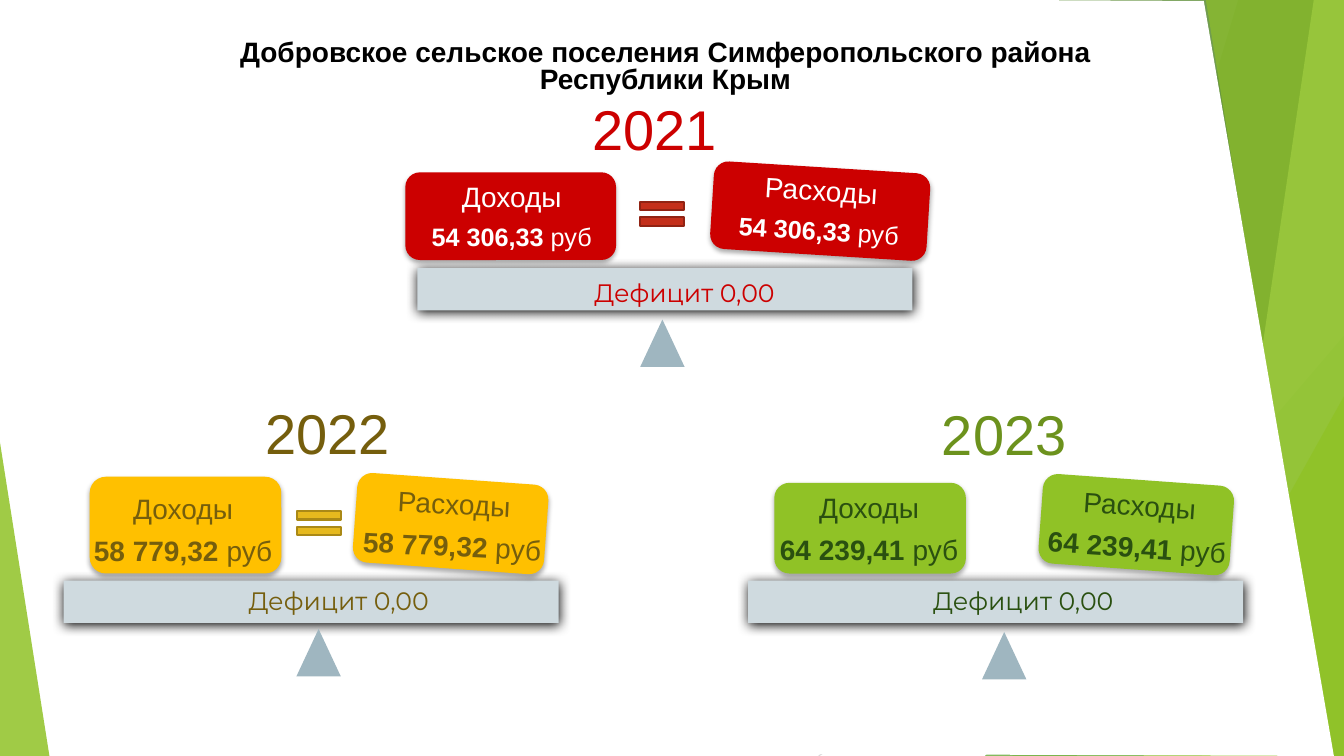
from lxml.etree import SubElement
from pptx import Presentation
from pptx.dml.color import RGBColor
from pptx.enum.shapes import MSO_CONNECTOR, MSO_SHAPE
from pptx.enum.text import MSO_AUTO_SIZE, PP_ALIGN
from pptx.oxml.ns import qn
from pptx.util import Pt

UNIT = 9144  # one px is 1/100 inch
WIDE, HIGH = 1333, 750


def px(n):
    return round(n * UNIT)


def rgb(code):
    return RGBColor.from_string(code)


def paint(shape, color, alpha=100, edge=None):
    shape.shadow.inherit = False
    shape.fill.solid()
    shape.fill.fore_color.rgb = rgb(color)
    if alpha < 100:
        tone = shape.fill._xPr.find(".//" + qn("a:srgbClr"))
        SubElement(tone, qn("a:alpha"), val=str(alpha * 1000))
    if edge:
        shape.line.color.rgb = rgb(edge)
        shape.line.width = Pt(1.5)
    else:
        shape.line.fill.background()


def shade(shape, alpha, blur, dist):
    glow = shape._element.spPr.find(qn("a:effectLst"))
    cast = SubElement(glow, qn("a:outerShdw"), blurRad=str(Pt(blur)),
                      dist=str(Pt(dist)), dir="5400000", rotWithShape="0")
    tone = SubElement(cast, qn("a:srgbClr"), val="000000")
    SubElement(tone, qn("a:alpha"), val=str(alpha * 1000))


def form(slide, kind, box, color, alpha=100, edge=None, adj=(), turn=0):
    shape = slide.shapes.add_shape(kind, *map(px, box))
    for i, part in enumerate(adj):
        shape.adjustments[i] = part
    shape.rotation = turn
    paint(shape, color, alpha, edge)
    return shape


def shard(slide, points, color, alpha=100):
    pen = slide.shapes.build_freeform(*points[0], scale=UNIT)
    pen.add_line_segments(points[1:], close=True)
    paint(pen.convert_to_shape(), color, alpha)


def write(slide, box, lines, color, font="Arial", after=None, turn=0):
    """Each line is a size and its (text, bold) runs."""
    label = slide.shapes.add_textbox(*map(px, box))
    label.rotation = turn
    frame = label.text_frame
    frame.word_wrap = True
    frame.auto_size = MSO_AUTO_SIZE.SHAPE_TO_FIT_TEXT
    for i, (size, runs) in enumerate(lines):
        para = frame.add_paragraph() if i else frame.paragraphs[0]
        para.alignment = PP_ALIGN.CENTER
        if after is not None:
            para.space_after = Pt(after)
        para.font.size = Pt(size)
        para.font.name = font
        para.font.color.rgb = rgb(color)
        for text, bold in runs:
            run = para.add_run()
            run.text = text
            run.font.bold = bold
    return frame.paragraphs[0]


def backdrop(slide):
    # Thin guide lines
    for ends, color in (((1025, 0, 1158, HIGH), "BFBFBF"),
                        ((WIDE, 403, 812, HIGH), "D9D9D9")):
        rule = slide.shapes.add_connector(MSO_CONNECTOR.STRAIGHT, *map(px, ends))
        rule.line.color.rgb = rgb(color)
        rule.line.width = Pt(0.75)
        SubElement(rule._element.spPr, qn("a:effectLst"))

    # Green bands, from their top and bottom left corners to the right edge
    def band(top, foot, color, alpha):
        shard(slide, [(top, 0), (WIDE, 0), (WIDE, HIGH), (foot, HIGH)], color, alpha)

    def wedge(left, top, wide, tip, color, alpha):
        form(slide, MSO_SHAPE.ISOSCELES_TRIANGLE, (left, top, wide, HIGH - top),
             color, alpha, adj=[tip])

    band(1228, 1004, "90C226", 30)
    band(1050, 1183, "90C226", 20)
    wedge(977, 333, 356, 1, "54A021", 72)
    band(1021, 1291, "3F7819", 70)
    band(1303, 1192, "C0E474", 70)
    band(1196, 1318, "90C226", 65)
    wedge(1134, 393, 199, 1, "90C226", 80)
    wedge(0, 439, 49, 0, "90C226", 85)

    # White area over the bands
    shard(slide, [(1194, 1), (1323, 750), (786, 748), (1043, 560),
                  (1070, 409), (991, 0)], "FFFFFF")


def heading(slide, box):
    text = "Добровское сельское поселения Симферопольского района Республики Крым"
    para = write(slide, box, [(20, [(text, True)])], "000000")
    para.line_spacing = 0.8
    props = para._p.get_or_add_pPr()
    props.set("marL", str(px(50)))
    props.set("indent", "0")


def scale(slide, left, top, year, sum, fill, ink, tint, size,
          date, foot, note, cards, labels, sign=None):
    """One balance; all places are relative to the corner of its beam."""
    def at(x, y, *rest):
        return (left + x, top + y, *rest)

    # Beam, support and deficit
    beam = form(slide, MSO_SHAPE.RECTANGLE, at(0, 0, 491, 42), "CFDADF")
    shade(beam, 100, 8.5, 1)
    form(slide, MSO_SHAPE.ISOSCELES_TRIANGLE, at(*foot, 44, 47), "9FB6C0")
    write(slide, at(*date, 190, 77), [(40, [(year, None)])], tint)
    write(slide, at(*note, 354, 40), [(18, [("Дефицит 0,00", None)])],
          ink if year == "2023" else tint, "Montserrat")

    # Income and expense cards
    for box, turn in cards:
        card = form(slide, MSO_SHAPE.FLOWCHART_ALTERNATE_PROCESS, at(*box), fill, turn=turn)
        shade(card, 32, 3.5, 2.2)
    for name, (box, turn) in zip(("Доходы", "Расходы"), labels):
        lines = [(20, [(name, None)]), (size, [(sum + " ", True), ("руб", False)])]
        write(slide, at(*box), lines, ink, after=6, turn=turn)

    # Equals sign
    if sign:
        x, y, color, edge = sign
        form(slide, MSO_SHAPE.MATH_EQUAL, at(x, y, 59, 36), color, edge=edge,
             adj=[0.235, 0.195])


def main():
    deck = Presentation()
    deck.slide_width, deck.slide_height = px(WIDE), px(HIGH)
    slide = deck.slides.add_slide(deck.slide_layouts[6])
    backdrop(slide)
    scale(slide, 742, 576, "2023", "64 239,41", "90C226", "2A5010", "6C921D", 20,
          date=(159, -185), foot=(232, 51), note=(96, 0),
          cards=[((26, -97, 190, 90), 0), ((290, -100, 190, 89), 4.1)],
          labels=[((2, -94, 236, 86), 0), ((285, -97, 204, 86), 3.8)])
    scale(slide, 63, 576, "2022", "58 779,32", "FFC000", "755E0D", "755E0D", 20,
          date=(167, -186), foot=(231, 48), note=(96, 0),
          cards=[((26, -103, 190, 96), 0), ((289, -101, 190, 89), 4.1)],
          labels=[((19, -93, 199, 86), 0), ((285, -98, 203, 86), 2.9)],
          sign=(224, -75, "E6B91E", "AA8916"))
    scale(slide, 414, 266, "2021", "54 306,33", "CC0000", "FFFFFF", "CC0000", 18,
          date=(140, -177), foot=(221, 51), note=(88, 4),
          cards=[((-12, -95, 209, 87), 0), ((292, -100, 215, 87), 3.6)],
          labels=[((-22, -93, 231, 82), 0), ((278, -99, 243, 82), 3.5)],
          sign=(213, -72, "C42F1A", "912313"))
    heading(slide, (131, 36, 1008, 37))
    deck.save("out.pptx")


if __name__ == "__main__":
    main()
